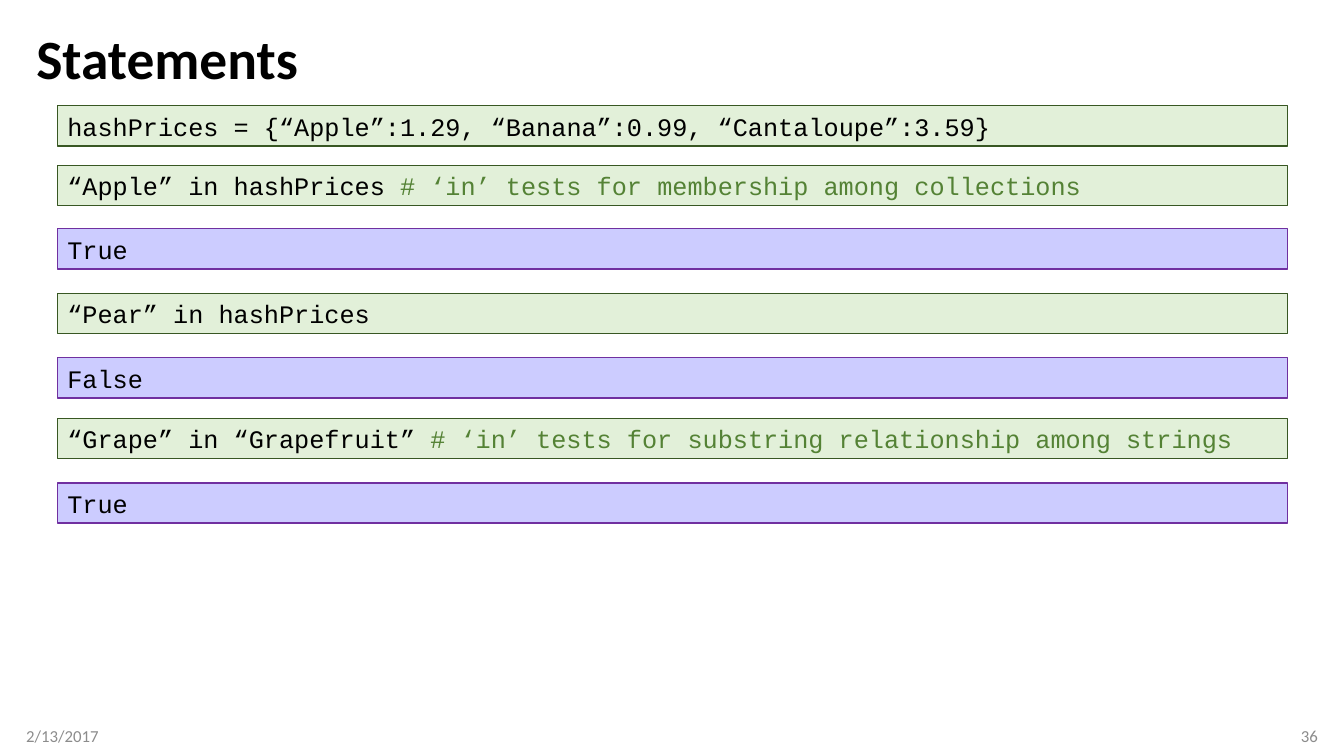
"""Build the Statements slide: code lines and their results for the 'in' operator."""
import pptx
import pptx.util
import pptx.dml.color
import pptx.enum.shapes
import pptx.enum.text

PX = 9144
BLACK = pptx.dml.color.RGBColor(0x00, 0x00, 0x00)
GRAY = pptx.dml.color.RGBColor(0x8C, 0x8C, 0x8C)
COMMENT_GREEN = pptx.dml.color.RGBColor(0x54, 0x82, 0x35)
CODE_STYLE = (pptx.dml.color.RGBColor(0xE2, 0xF0, 0xD9), pptx.dml.color.RGBColor(0x38, 0x57, 0x23))
RESULT_STYLE = (pptx.dml.color.RGBColor(0xCC, 0xCC, 0xFF), pptx.dml.color.RGBColor(0x70, 0x30, 0xA0))
MIDDLE = pptx.enum.text.MSO_ANCHOR.MIDDLE
LEFT = pptx.enum.text.PP_ALIGN.LEFT
RIGHT = pptx.enum.text.PP_ALIGN.RIGHT


def place(left, top, width, height):
    return [length * PX for length in (left, top, width, height)]


def format_span(span, font, size, color):
    span.font.name = font
    span.font.size = pptx.util.Pt(size)
    span.font.color.rgb = color


deck = pptx.Presentation()
deck.slide_width = 1333 * PX
deck.slide_height = 750 * PX
page = deck.slides.add_slide(deck.slide_layouts[5])

title = page.shapes.title
title.left, title.top, title.width, title.height = place(26, 25, 1281, 72)
title.text_frame.text = "Statements"
title.text_frame.vertical_anchor = MIDDLE
title.text_frame.auto_size = pptx.enum.text.MSO_AUTO_SIZE.NONE
para = title.text_frame.paragraphs[0]
para.alignment = LEFT
para.line_spacing = 0.9
format_span(para.runs[0], "Calibri", 39.6, BLACK)
para.runs[0].font.bold = True

rows = [
    (105, CODE_STYLE, "hashPrices = {“Apple”:1.29, “Banana”:0.99, “Cantaloupe”:3.59}", ""),
    (164, CODE_STYLE, "“Apple” in hashPrices ", "# ‘in’ tests for membership among collections"),
    (227, RESULT_STYLE, "True", ""),
    (291, CODE_STYLE, "“Pear” in hashPrices", ""),
    (355, RESULT_STYLE, "False", ""),
    (415, CODE_STYLE, "“Grape” in “Grapefruit” ", "# ‘in’ tests for substring relationship among strings"),
    (479, RESULT_STYLE, "True", ""),
]
for top, (fill, border), code, comment in rows:
    box = page.shapes.add_shape(pptx.enum.shapes.MSO_SHAPE.RECTANGLE, *place(57, top, 1220, 40))
    box.shadow.inherit = False
    box.fill.solid()
    box.fill.fore_color.rgb = fill
    box.line.color.rgb = border
    box.line.width = pptx.util.Pt(1)
    box.text_frame.word_wrap = True
    box.text_frame.vertical_anchor = MIDDLE
    para = box.text_frame.paragraphs[0]
    para.alignment = LEFT
    for text, color in ((code, BLACK), (comment, COMMENT_GREEN)):
        if text:
            span = para.add_run()
            span.text = text
            format_span(span, "Courier New", 18, color)

for left, text, alignment, inset_left, inset_right in (
    (26, "2/13/2017", LEFT, 0, 10),
    (1007, "36", RIGHT, 10, 0),
):
    box = page.shapes.add_textbox(*place(left, 710, 300, 40))
    box.text_frame.word_wrap = True
    box.text_frame.vertical_anchor = MIDDLE
    box.text_frame.margin_left = inset_left * PX
    box.text_frame.margin_right = inset_right * PX
    box.text_frame.text = text
    para = box.text_frame.paragraphs[0]
    para.alignment = alignment
    format_span(para.runs[0], "Calibri", 12, GRAY)

deck.save("out.pptx")
